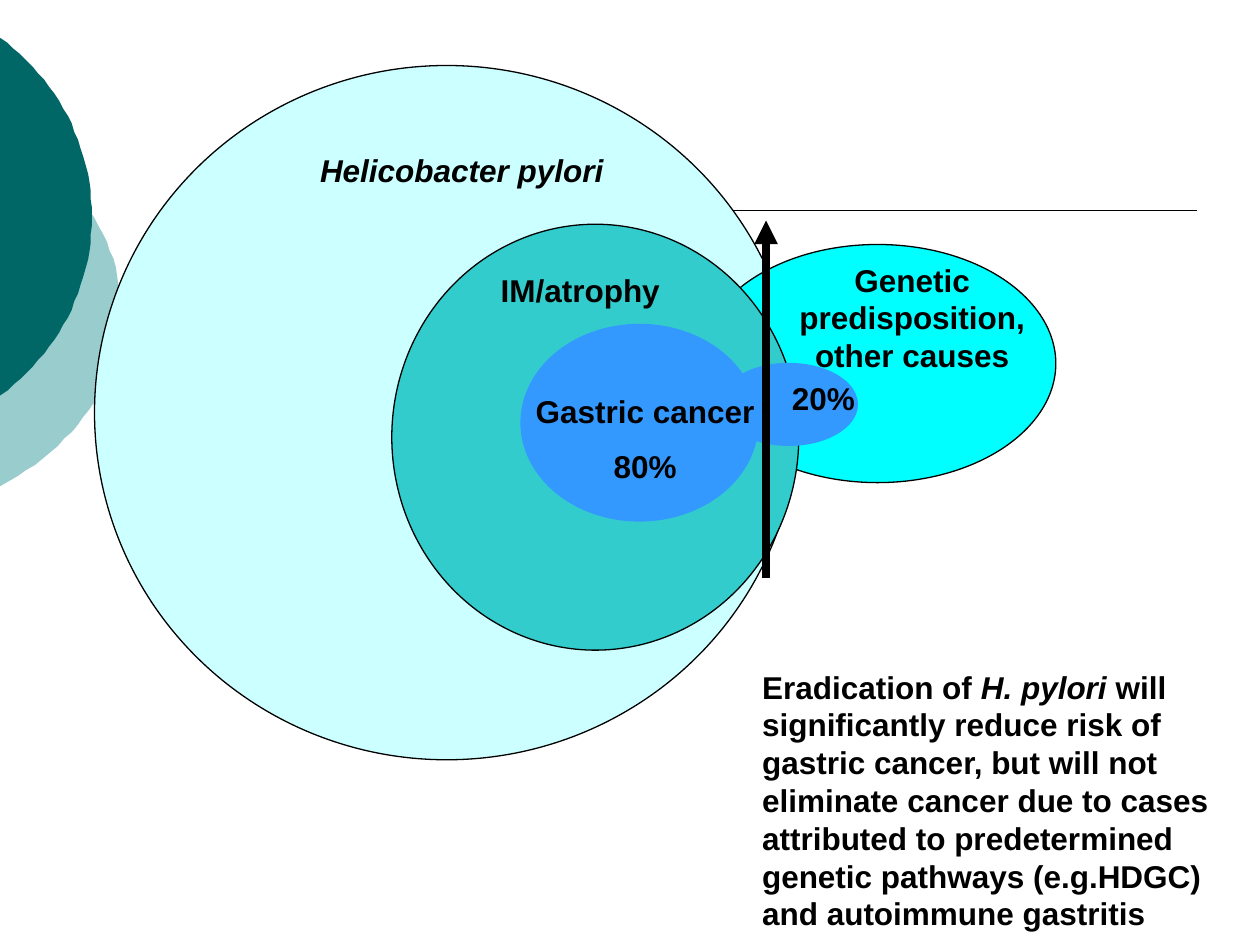
from dataclasses import dataclass
from math import acos, cos, sin

from lxml.etree import SubElement
from pptx import Presentation
from pptx.dml.color import RGBColor
from pptx.enum.shapes import MSO_CONNECTOR, MSO_SHAPE
from pptx.enum.text import PP_ALIGN
from pptx.oxml.ns import qn
from pptx.util import Pt

PX = 9144  # EMU per px, 100 px to the inch
BLACK = "000000"
STEPS = 48


@dataclass
class Disc:
    """An ellipse that runs off the left edge of the slide."""
    x: int
    y: int
    rx: int
    ry: int
    fill: str


@dataclass
class Oval:
    x: int
    y: int
    w: int
    h: int
    fill: str
    edged: bool = True


@dataclass
class Label:
    x: int
    y: int
    w: int
    h: int
    paras: list[list[str]]  # runs marked with a leading * are italic
    align: PP_ALIGN = PP_ALIGN.CENTER


DISCS = [
    Disc(-129, 246, 225, 171, "99CCCC"),
    Disc(-96, 172, 169, 172, "006666"),
]
OVALS = [
    Oval(75, 52, 559, 551, "CCFFFF"),
    Oval(555, 194, 283, 189, "00FFFF"),
    Oval(311, 178, 323, 338, "33CCCC"),
    Oval(413, 257, 189, 157, "3399FF", False),
    Oval(571, 288, 110, 66, "3399FF", False),
]
LABELS = [
    Label(358, 210, 205, 40, [["IM/atrophy"]]),
    Label(209, 115, 315, 40, [["*Helicobacter pylori"]]),
    Label(602, 202, 244, 100, [["Genetic predisposition, other causes"]]),
    Label(595, 525, 402, 220, [[
        "Eradication of ", "*H. pylori ",
        "will significantly reduce risk of gastric cancer, but will not "
        "eliminate cancer due to cases attributed to predetermined genetic "
        "pathways (e.g.HDGC) and autoimmune gastritis"]], PP_ALIGN.LEFT),
    Label(390, 306, 244, 85, [["Gastric cancer"], ["80%"]]),
    Label(610, 296, 87, 40, [["20%"]]),
]


def color(code: str) -> RGBColor:
    return RGBColor.from_string(code)


def paint(shape, fill: str, edged: bool) -> None:
    shape.shadow.inherit = False
    shape.fill.solid()
    shape.fill.fore_color.rgb = color(fill)
    if edged:
        shape.line.color.rgb = color(BLACK)
        shape.line.width = Pt(0.75)
    else:
        shape.line.fill.background()


def draw_disc(shapes, disc: Disc) -> None:
    """Draw only the part of the disc right of the slide's left edge."""
    reach = acos(-disc.x / disc.rx)
    turns = [reach * (2 * i / STEPS - 1) for i in range(STEPS + 1)]
    spots = [(disc.x + disc.rx * cos(t), disc.y + disc.ry * sin(t))
             for t in turns]
    form = shapes.build_freeform(*spots[0], scale=PX)
    form.add_line_segments(spots[1:], close=True)
    paint(form.convert_to_shape(), disc.fill, False)


def draw_oval(shapes, oval: Oval) -> None:
    box = [n * PX for n in (oval.x, oval.y, oval.w, oval.h)]
    paint(shapes.add_shape(MSO_SHAPE.OVAL, *box), oval.fill, oval.edged)


def draw_line(shapes, x1: int, y1: int, x2: int, y2: int, width: float,
              arrow: bool = False) -> None:
    ends = [n * PX for n in (x1, y1, x2, y2)]
    line = shapes.add_connector(MSO_CONNECTOR.STRAIGHT, *ends)
    line.line.color.rgb = color(BLACK)
    line.line.width = Pt(width)
    if arrow:
        SubElement(line.line._get_or_add_ln(), qn("a:tailEnd"),
                   type="triangle")
    SubElement(line._element.spPr, qn("a:effectLst"))


def draw_label(shapes, label: Label) -> None:
    box = [n * PX for n in (label.x, label.y, label.w, label.h)]
    frame = shapes.add_textbox(*box).text_frame
    frame.word_wrap = True
    for i, runs in enumerate(label.paras):
        para = frame.add_paragraph() if i else frame.paragraphs[0]
        para.alignment = label.align
        if i:
            para.space_before = Pt(10)
        font = para.font
        font.name, font.size, font.bold = "Arial", Pt(18), True
        font.color.rgb = color(BLACK)
        for text in runs:
            run = para.add_run()
            run.text = text.removeprefix("*")
            if text.startswith("*"):
                run.font.italic = True


def main() -> None:
    deck = Presentation()
    deck.slide_width, deck.slide_height = 1000 * PX, 750 * PX
    shapes = deck.slides.add_slide(deck.slide_layouts[6]).shapes
    for disc in DISCS:
        draw_disc(shapes, disc)
    draw_line(shapes, 150, 167, 950, 167, 1)
    for oval in OVALS:
        draw_oval(shapes, oval)
    draw_line(shapes, 608, 459, 608, 175, 4.5, arrow=True)
    for label in LABELS:
        draw_label(shapes, label)
    deck.save("out.pptx")


if __name__ == "__main__":
    main()
